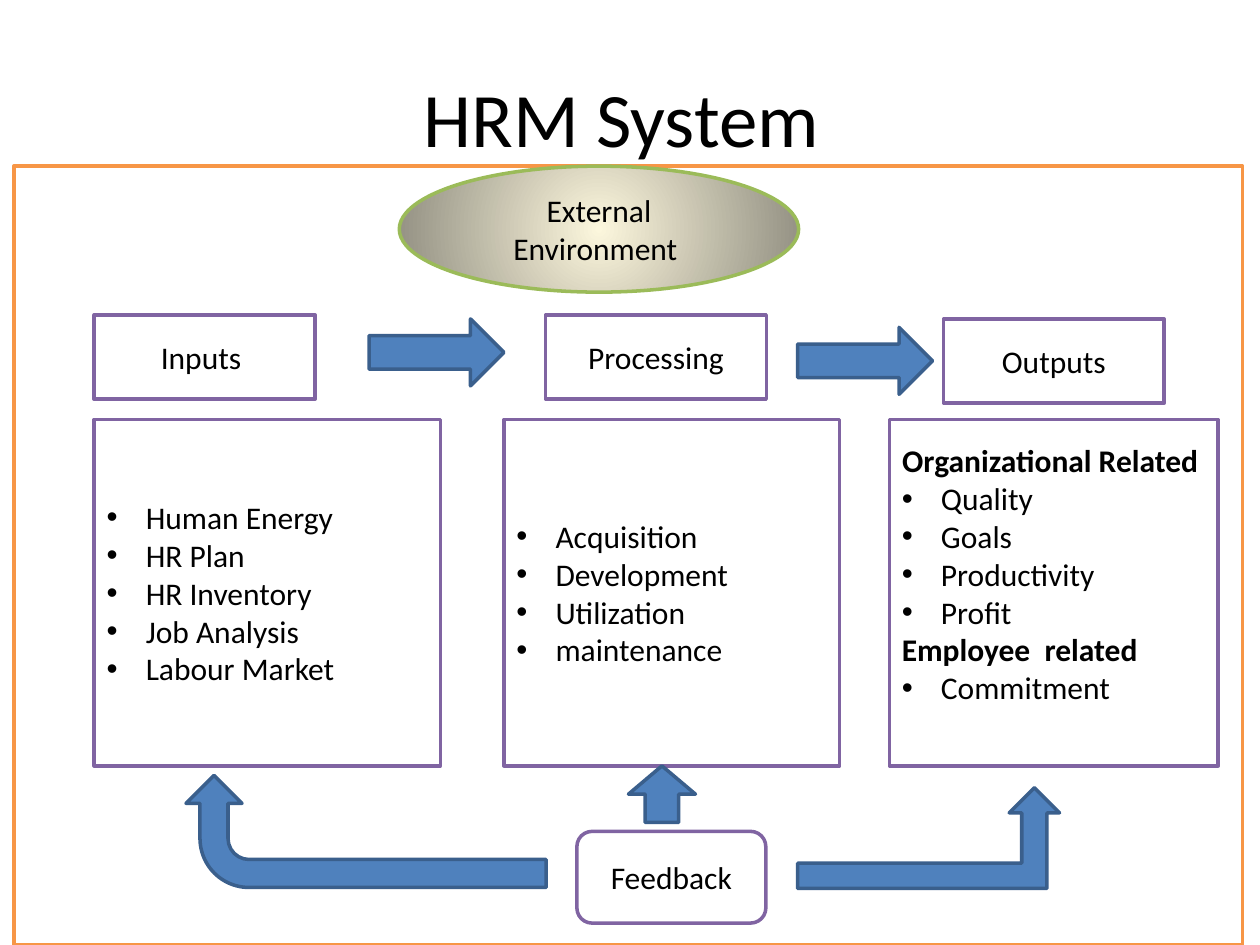
import pptx
import pptx.dml.color
import pptx.enum.shapes
import pptx.enum.text
import pptx.oxml
import pptx.oxml.ns
import pptx.util

Cm = pptx.util.Cm
Pt = pptx.util.Pt
SHAPE = pptx.enum.shapes.MSO_SHAPE
ALIGN = pptx.enum.text.PP_ALIGN
MIDDLE = pptx.enum.text.MSO_ANCHOR.MIDDLE

COLOURS = {
    "text": "000000",
    "paper": "FFFFFF",
    "frame": "F79646",
    "box": "8064A2",
    "arrow": "4F81BD",
    "arrow_edge": "3A5F8C",
    "ellipse_edge": "9BBB59",
    "glow_centre": "FCF7DD",
    "glow_rim": "918E81",
}


def colour(name):
    return pptx.dml.color.RGBColor.from_string(COLOURS[name])


class SystemPage:
    font = "Calibri"
    body_size = 18
    title_size = 44
    line_width = 2
    bullet_indent = Cm(0.79)

    def __init__(self, deck):
        self.page = deck.slides.add_slide(deck.slide_layouts[5])

    def add_span(self, para, text, size, bold=False):
        span = para.add_run()
        span.text = text
        span.font.name = self.font
        span.font.size = Pt(size)
        span.font.bold = bold
        span.font.color.rgb = colour("text")

    def title(self, text, left, top, width, height):
        box = self.page.shapes.title
        box.left, box.top, box.width, box.height = map(Cm, (left, top, width, height))
        box.text_frame.vertical_anchor = MIDDLE
        para = box.text_frame.paragraphs[0]
        para.alignment = ALIGN.CENTER
        self.add_span(para, text, self.title_size)

    def shape(self, kind, left, top, width, height, fill="paper", line="box"):
        item = self.page.shapes.add_shape(kind, *map(Cm, (left, top, width, height)))
        item.shadow.inherit = False
        item.fill.solid()
        item.fill.fore_color.rgb = colour(fill)
        item.line.color.rgb = colour(line)
        item.line.width = Pt(self.line_width)
        return item

    def label(self, text, kind, *place, line="box"):
        box = self.shape(kind, *place, line=line)
        box.text_frame.word_wrap = True
        box.text_frame.vertical_anchor = MIDDLE
        para = box.text_frame.paragraphs[0]
        para.alignment = ALIGN.CENTER
        self.add_span(para, text, self.body_size)
        return box

    def arrow(self, kind, *place, rotation=0):
        item = self.shape(kind, *place, fill="arrow", line="arrow_edge")
        item.rotation = rotation

    def list_box(self, groups, *place, bottom_inset=0.13):
        """Draw a box of (heading, heading alignment, bullet items) groups."""
        frame = self.shape(SHAPE.RECTANGLE, *place).text_frame
        frame.word_wrap = True
        frame.vertical_anchor = MIDDLE
        frame.margin_bottom = Cm(bottom_inset)
        rows = []
        for heading, align, items in groups:
            if heading:
                rows.append((heading, align, True))
            rows += [(item, ALIGN.LEFT, False) for item in items]
        for index, (text, align, is_heading) in enumerate(rows):
            para = frame.add_paragraph() if index else frame.paragraphs[0]
            para.alignment = align
            self.add_span(para, text, self.body_size, bold=is_heading)
            if not is_heading:
                self.bullet(para)

    def bullet(self, para):
        props = para._p.get_or_add_pPr()
        props.set("marL", str(self.bullet_indent))
        props.set("indent", str(-self.bullet_indent))
        namespace = pptx.oxml.ns.nsdecls("a")
        for mark in ('buFont {} typeface="Arial"', 'buChar {} char="•"'):
            props.append(pptx.oxml.parse_xml(f"<a:{mark.format(namespace)}/>"))

    def radial_fill(self, item, centre, rim):
        item.fill.gradient()
        for stop, name, position in zip(item.fill.gradient_stops, (centre, rim), (0, 1)):
            stop.color.rgb = colour(name)
            stop.position = position
        linear = item._element.spPr.find(".//" + pptx.oxml.ns.qn("a:lin"))
        radial = pptx.oxml.parse_xml(
            f'<a:path {pptx.oxml.ns.nsdecls("a")} path="circle">'
            '<a:fillToRect l="50000" t="50000" r="50000" b="50000"/></a:path>')
        linear.getparent().replace(linear, radial)


def main():
    deck = pptx.Presentation()
    deck.slide_width, deck.slide_height = Cm(25.4), Cm(19.05)
    page = SystemPage(deck)

    page.title("HRM System ", 1.27, 0.76, 22.86, 3.18)
    page.shape(SHAPE.RECTANGLE, 0.28, 3.35, 24.77, 15.7, line="frame")

    stages = [("Inputs ", 1.9, 6.35), ("Processing", 11, 6.35), ("Outputs", 19.02, 6.43)]
    for text, left, top in stages:
        page.label(text, SHAPE.RECTANGLE, left, top, 4.45, 1.7)

    list_top, list_height = 8.46, 6.98
    inputs = ["Human Energy", "HR Plan", "HR Inventory", "Job Analysis", "Labour Market"]
    processes = ["Acquisition", "Development", "Utilization", "maintenance"]
    outputs = [
        ("Organizational Related ", ALIGN.CENTER, ["Quality", "Goals", "Productivity", "Profit"]),
        ("Employee  related", ALIGN.LEFT, ["Commitment"]),
    ]
    page.list_box([(None, None, inputs)], 1.9, list_top, 6.98, list_height)
    page.list_box([(None, None, processes)], 10.16, list_top, 6.77, list_height)
    page.list_box(outputs, 17.93, list_top, 6.63, list_height, bottom_inset=0.89)

    for left, top in ((7.44, 6.43), (16.08, 6.6)):
        page.arrow(SHAPE.RIGHT_ARROW, left, top, 2.72, 1.35)
    page.arrow(SHAPE.BENT_UP_ARROW, 16.08, 15.88, 5.28, 2.03)
    page.arrow(SHAPE.BENT_ARROW, 6.25, 13.13, 2.26, 7.26, rotation=270)
    page.label("Feedback", SHAPE.ROUNDED_RECTANGLE, 11.63, 16.76, 3.81, 1.85)
    page.arrow(SHAPE.UP_ARROW, 12.67, 15.44, 1.35, 1.14)

    environment = page.label("External Environment ", SHAPE.OVAL,
                             8.05, 3.35, 8.05, 2.54, line="ellipse_edge")
    page.radial_fill(environment, "glow_centre", "glow_rim")

    deck.save("out.pptx")


if __name__ == "__main__":
    main()
